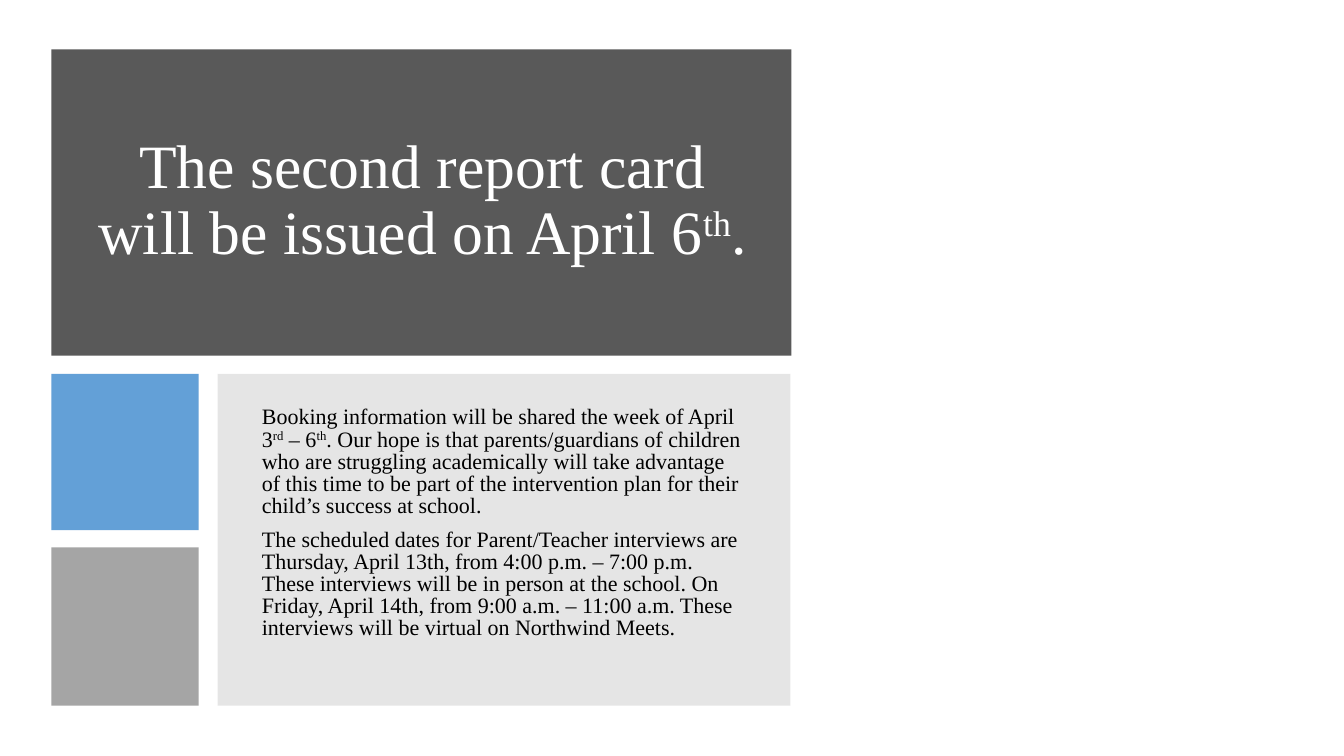
from pptx import Presentation
from pptx.dml.color import RGBColor
from pptx.enum.shapes import MSO_SHAPE
from pptx.enum.text import MSO_ANCHOR, PP_ALIGN
from pptx.oxml.ns import qn
from pptx.util import Inches, Pt
from lxml import etree

RECTANGLE = MSO_SHAPE.RECTANGLE
TOP, MIDDLE = MSO_ANCHOR.TOP, MSO_ANCHOR.MIDDLE
LEFT, CENTER = PP_ALIGN.LEFT, PP_ALIGN.CENTER

WHITE = RGBColor(0xFF, 0xFF, 0xFF)
BLACK = RGBColor(0x00, 0x00, 0x00)
CHARCOAL = RGBColor(0x59, 0x59, 0x59)
BLUE = RGBColor(0x5B, 0x9B, 0xD5)
SILVER = RGBColor(0xA5, 0xA5, 0xA5)
GRAY = RGBColor(0x80, 0x80, 0x80)

TITLE = [["The second report card will be issued on April 6", "th", "."]]
DETAILS = [
    ["Booking information will be shared the week of April 3", "rd", " – 6", "th",
     ". Our hope is that parents/guardians of children who are struggling "
     "academically will take advantage of this time to be part of the "
     "intervention plan for their child’s success at school."],
    ["The scheduled dates for Parent/Teacher interviews are Thursday, April 13th, "
     "from 4:00 p.m. – 7:00 p.m. These interviews will be in person at the school. "
     "On Friday, April 14th, from 9:00 a.m. – 11:00 a.m. These interviews will be "
     "virtual on Northwind Meets."],
]


class SlideBuilder:
    """Places elements by percentages of the slide's width and height."""

    font_name = "Times New Roman"

    def __init__(self, presentation):
        self.width = presentation.slide_width
        self.height = presentation.slide_height
        self.slide = presentation.slides.add_slide(presentation.slide_layouts[6])

    def box(self, left, top, width, height):
        """Turn percentages into slide lengths."""
        return (int(self.width * left / 100), int(self.height * top / 100),
                int(self.width * width / 100), int(self.height * height / 100))

    def block(self, area, color, opacity=100):
        shape = self.slide.shapes.add_shape(RECTANGLE, *self.box(*area))
        shape.shadow.inherit = False
        shape.line.fill.background()
        shape.fill.solid()
        shape.fill.fore_color.rgb = color
        if opacity < 100:
            color_element = shape._element.spPr.find(qn("a:solidFill"))[0]
            alpha = etree.SubElement(color_element, qn("a:alpha"))
            alpha.set("val", str(opacity * 1000))

    def text(self, area, paragraphs, size, color, spacing,
             alignment=LEFT, anchor=TOP, space_after=0):
        """Write paragraphs whose every second piece is a superscript."""
        frame = self.slide.shapes.add_textbox(*self.box(*area)).text_frame
        frame.word_wrap = True
        frame.vertical_anchor = anchor
        for index, pieces in enumerate(paragraphs):
            paragraph = frame.add_paragraph() if index else frame.paragraphs[0]
            paragraph.alignment = alignment
            paragraph.line_spacing = spacing
            paragraph.space_after = Pt(space_after)
            paragraph.font.name = self.font_name
            paragraph.font.size = Pt(size)
            paragraph.font.color.rgb = color
            for position, piece in enumerate(pieces):
                run = paragraph.add_run()
                run.text = piece
                if position % 2:
                    run._r.get_or_add_rPr().set("baseline", "30000")


def main():
    presentation = Presentation()
    presentation.slide_width = Inches(13.33)
    presentation.slide_height = Inches(7.5)
    builder = SlideBuilder(presentation)

    builder.block((3.83, 6.53, 55.06, 40.53), CHARCOAL)
    builder.text((6.38, 11.07, 50.11, 31.2), TITLE, 44, WHITE, 0.9, CENTER, MIDDLE)

    builder.block((3.83, 49.47, 10.95, 20.67), BLUE, 95)
    builder.block((3.83, 72.4, 10.95, 20.93), SILVER)
    builder.block((16.2, 49.47, 42.61, 43.87), GRAY, 20)
    builder.text((18.75, 53.2, 37.13, 36.13), DETAILS, 15.7, BLACK, 0.84,
                 space_after=8)

    presentation.save("out.pptx")


if __name__ == "__main__":
    main()
